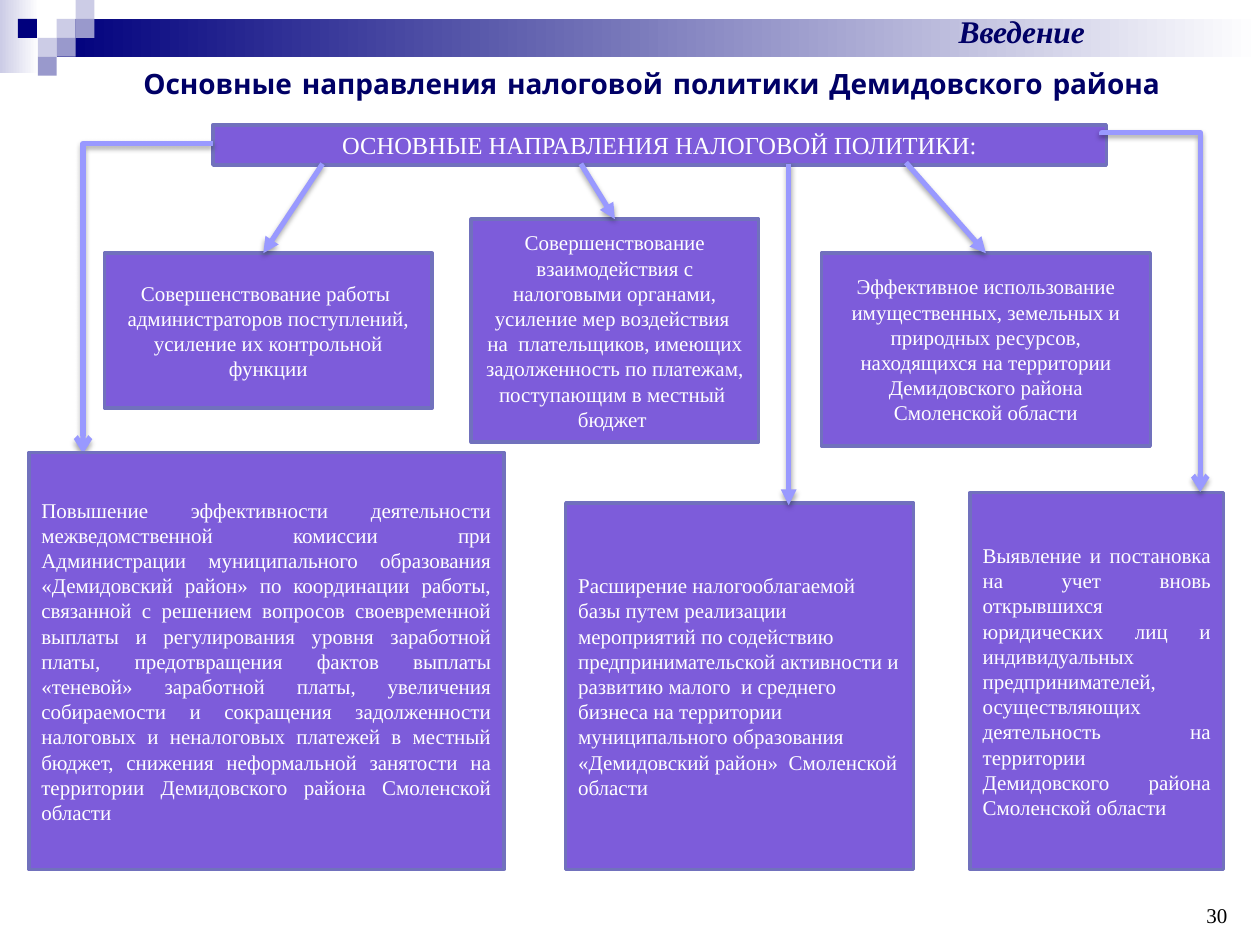
from typing import NamedTuple, Optional

from lxml.etree import SubElement
from pptx import Presentation
from pptx.dml.color import RGBColor
from pptx.enum.shapes import MSO_CONNECTOR, MSO_SHAPE
from pptx.enum.text import MSO_ANCHOR, PP_ALIGN
from pptx.oxml.ns import qn
from pptx.util import Inches, Pt

SERIF = "Times New Roman"
NAVY = "000066"
PALE, MID, DEEP = "CCCCE6", "9999CC", "00007D"
SIDE = 0.15


class Area(NamedTuple):
    left: float
    top: float
    width: float
    height: float


class Style(NamedTuple):
    size: float
    color: str
    font: str = SERIF
    bold: bool = False
    italic: bool = False


class Box(NamedTuple):
    area: Area
    text: str
    align: PP_ALIGN = PP_ALIGN.CENTER
    size: float = 12


class Label(NamedTuple):
    area: Area
    text: str
    style: Style
    align: PP_ALIGN = PP_ALIGN.CENTER
    anchor: MSO_ANCHOR = MSO_ANCHOR.TOP


class Arrow(NamedTuple):
    start: tuple[float, float]
    end: tuple[float, float]
    goal: Optional[int] = None


class Elbow(NamedTuple):
    start: tuple[float, float]
    end: tuple[float, float]
    preset: str
    turn: int = 0
    bend: Optional[int] = None


HEAD = Box(Area(1.69, 0.99, 7.09, 0.32), "ОСНОВНЫЕ НАПРАВЛЕНИЯ НАЛОГОВОЙ ПОЛИТИКИ:", size=14)
BOXES = [
    HEAD,
    Box(Area(0.83, 2.01, 2.6, 1.23),
        "Совершенствование работы  администраторов поступлений, усиление их контрольной функции"),
    Box(Area(3.74, 1.74, 2.28, 1.77),
        "Совершенствование взаимодействия с налоговыми органами, усиление мер воздействия  на  "
        "плательщиков, имеющих задолженность по платежам, поступающим в местный  бюджет "),
    Box(Area(4.49, 3.99, 2.76, 2.91),
        "Расширение налогооблагаемой базы путем реализации мероприятий по содействию "
        "предпринимательской активности и развитию малого  и среднего бизнеса на территории "
        "муниципального образования «Демидовский район»  Смоленской области", PP_ALIGN.LEFT),
    Box(Area(6.52, 2.01, 2.61, 1.53),
        "Эффективное использование имущественных, земельных и природных ресурсов, находящихся "
        "на территории Демидовского района Смоленской области"),
    Box(Area(7.7, 3.91, 2.01, 2.99),
        "Выявление и постановка на учет вновь открывшихся  юридических лиц и индивидуальных "
        "предпринимателей, осуществляющих деятельность на территории  Демидовского района "
        "Смоленской области ", PP_ALIGN.JUSTIFY),
]
PANEL = Box(
    Area(0.23, 3.59, 3.77, 3.31),
    "Повышение эффективности деятельности межведомственной комиссии при Администрации "
    "муниципального образования «Демидовский район» по координации работы, связанной с "
    "решением вопросов своевременной выплаты и регулирования уровня заработной платы, "
    "предотвращения фактов выплаты «теневой» заработной платы, увеличения собираемости и "
    "сокращения задолженности налоговых и неналоговых платежей в местный бюджет, снижения "
    "неформальной занятости на территории Демидовского района Смоленской области",
    PP_ALIGN.JUSTIFY)
ARROWS = [
    Arrow((2.56, 1.3), (2.09, 2.01)),
    Arrow((4.61, 1.3), (4.88, 1.74), 2),
    Arrow((6.26, 1.3), (6.26, 4.01)),
    Arrow((7.19, 1.29), (7.83, 2.01), 4),
]
ELBOWS = [
    Elbow((1.69, 1.14), (0.66, 3.6), "bentConnector2"),
    Elbow((10.55, 2.1), (7.72, 2.88), "bentConnector3", 270, -800),
]
LABELS = [
    Label(Area(7.51, 6.91, 2.33, 0.5), "30", Style(12, "000000"), PP_ALIGN.RIGHT, MSO_ANCHOR.BOTTOM),
    Label(Area(6.26, 0.05, 3.7, 0.4), "Введение", Style(18, NAVY, bold=True, italic=True)),
    Label(Area(0.93, 0.48, 8.49, 0.37), "Основные направления налоговой политики Демидовского района",
          Style(16, NAVY, "Comic Neue", True)),
]
BANDS = [
    (Area(0, 0, 0.31, 0.58), PALE),
    (Area(0.45, 0.15, 9.55, 0.3), DEEP),
]
TILES = [
    (3, 1, PALE), (4, 0, PALE), (4, 1, MID), (2, 2, PALE),
    (0.95, 1, DEEP), (3, 2, MID), (2, 3, MID),
]


def tint(code: str) -> RGBColor:
    return RGBColor.from_string(code)


def place(area: Area) -> list[Inches]:
    return [Inches(part) for part in area]


def write(shape, text: str, style: Style, align: PP_ALIGN, anchor: MSO_ANCHOR) -> None:
    frame = shape.text_frame
    frame.text = text
    frame.word_wrap = True
    frame.vertical_anchor = anchor
    para = frame.paragraphs[0]
    para.alignment = align
    for run in para.runs:
        font = run.font
        font.name, font.size = style.font, Pt(style.size)
        font.bold, font.italic = style.bold, style.italic
        font.color.rgb = tint(style.color)


def draw_rect(slide, area: Area):
    shape = slide.shapes.add_shape(MSO_SHAPE.RECTANGLE, *place(area))
    shape.shadow.inherit = False
    shape.line.fill.background()
    return shape


def draw_band(slide, area: Area, color: str) -> None:
    fill = draw_rect(slide, area).fill
    fill.gradient()
    fill.gradient_angle = 0
    for stop, shade, spot in zip(fill.gradient_stops, (color, "FFFFFF"), (0, 1)):
        stop.color.rgb = tint(shade)
        stop.position = spot


def draw_tile(slide, col: float, row: int, color: str) -> None:
    fill = draw_rect(slide, Area(col * SIDE, row * SIDE, SIDE, SIDE)).fill
    fill.solid()
    fill.fore_color.rgb = tint(color)


def draw_box(slide, box: Box):
    shape = draw_rect(slide, box.area)
    shape.fill.solid()
    shape.fill.fore_color.rgb = tint("7D5CDA")
    shape.line.color.rgb = tint("7171BD")
    shape.line.width = Pt(2)
    write(shape, box.text, Style(box.size, "FFFFFF"), box.align, MSO_ANCHOR.MIDDLE)
    return shape


def draw_label(slide, label: Label) -> None:
    shape = slide.shapes.add_textbox(*place(label.area))
    write(shape, label.text, label.style, label.align, label.anchor)


def draw_link(slide, kind: MSO_CONNECTOR, start: tuple, end: tuple, tip: str):
    link = slide.shapes.add_connector(kind, *place(start + end))
    link.line.color.rgb = tint("9999FF")
    link.line.width = Pt(3)
    props = link.element.spPr
    SubElement(props.find(qn("a:ln")), qn("a:tailEnd"), type=tip)
    glow = SubElement(SubElement(props, qn("a:effectLst")), qn("a:outerShdw"),
                      blurRad=str(Pt(3.1)), dist=str(Pt(1.8)), dir="5400000", rotWithShape="0")
    SubElement(SubElement(glow, qn("a:srgbClr"), val="000000"), qn("a:alpha"), val="35000")
    return link


def draw_arrow(slide, arrow: Arrow, shapes: list) -> None:
    link = draw_link(slide, MSO_CONNECTOR.STRAIGHT, arrow.start, arrow.end, "triangle")
    if arrow.goal is not None:
        link.end_connect(shapes[arrow.goal], 0)


def draw_elbow(slide, elbow: Elbow) -> None:
    props = draw_link(slide, MSO_CONNECTOR.ELBOW, elbow.start, elbow.end, "arrow").element.spPr
    props.find(qn("a:xfrm")).set("rot", str(elbow.turn * 60000))
    geom = props.find(qn("a:prstGeom"))
    geom.set("prst", elbow.preset)
    if elbow.bend is not None:
        SubElement(geom.find(qn("a:avLst")), qn("a:gd"), name="adj1", fmla=f"val {elbow.bend}")


def main() -> None:
    deck = Presentation()
    deck.slide_width, deck.slide_height = Inches(10), Inches(7.5)
    slide = deck.slides.add_slide(deck.slide_layouts[6])
    for area, color in BANDS:
        draw_band(slide, area, color)
    for tile in TILES:
        draw_tile(slide, *tile)
    shapes = [draw_box(slide, box) for box in BOXES]
    for arrow in ARROWS:
        draw_arrow(slide, arrow, shapes)
    for elbow in ELBOWS:
        draw_elbow(slide, elbow)
    draw_box(slide, PANEL)
    for label in LABELS:
        draw_label(slide, label)
    deck.save("out.pptx")


if __name__ == "__main__":
    main()
